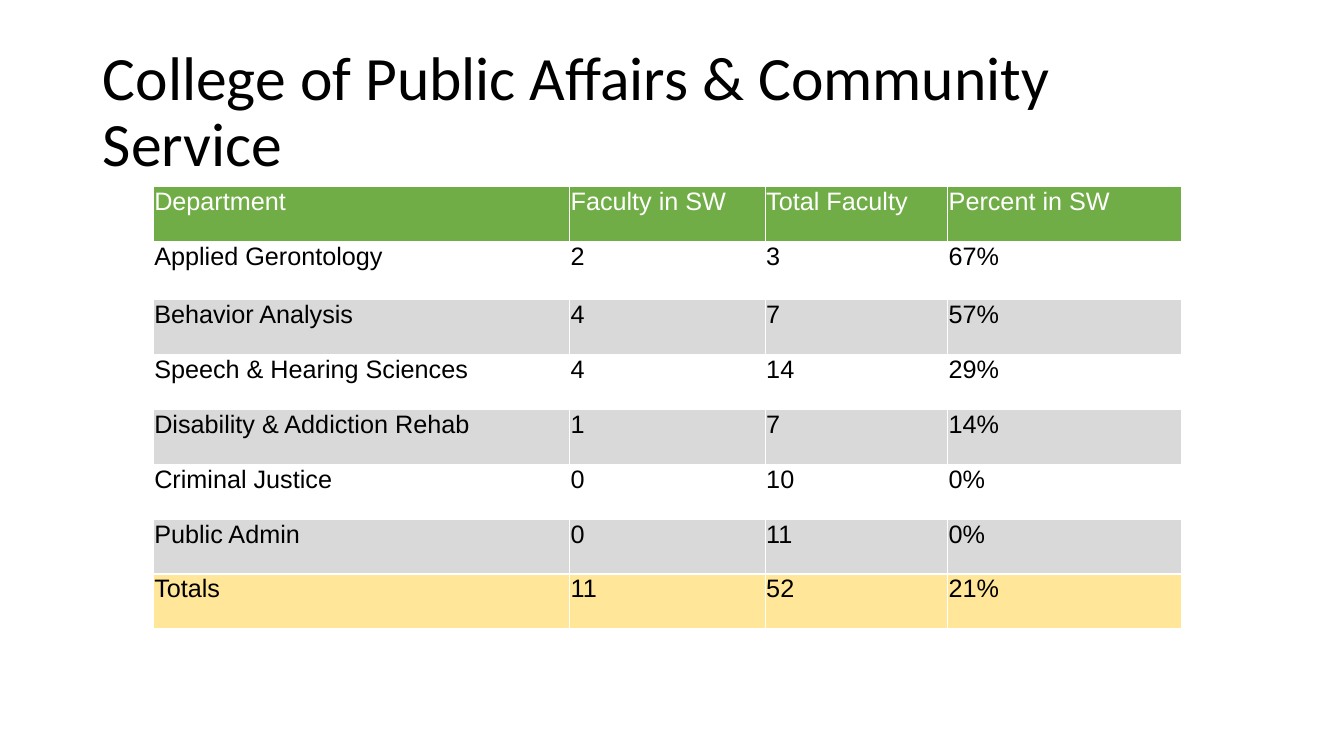
from lxml.etree import SubElement
from pptx import Presentation
from pptx.dml.color import RGBColor
from pptx.enum.text import MSO_ANCHOR, MSO_AUTO_SIZE, PP_ALIGN
from pptx.oxml.ns import qn
from pptx.util import Inches, Pt

BLACK = RGBColor(0x00, 0x00, 0x00)
WHITE = RGBColor(0xFF, 0xFF, 0xFF)
GREEN = RGBColor(0x70, 0xAD, 0x47)
GRAY = RGBColor(0xD9, 0xD9, 0xD9)
YELLOW = RGBColor(0xFF, 0xE6, 0x99)

TITLE = "College of Public Affairs & Community Service"
TITLE_BOX = (0.92, 0.4, 11.5, 1.45)
TABLE_BOX = (1.52, 1.85, 10.2, 4.39)
COLUMN_WEIGHTS = (4.13, 1.94, 1.81, 2.32)
FIRST_DEPARTMENT_HEIGHT = 0.58
FACULTY_ROWS = (
    ("Department", "Faculty in SW", "Total Faculty", "Percent in SW"),
    ("Applied Gerontology", "2", "3", "67%"),
    ("Behavior Analysis", "4", "7", "57%"),
    ("Speech & Hearing Sciences", "4", "14", "29%"),
    ("Disability & Addiction Rehab", "1", "7", "14%"),
    ("Criminal Justice", "0", "10", "0%"),
    ("Public Admin", "0", "11", "0%"),
    ("Totals", "11", "52", "21%"),
)


def format_font(paragraph, name, size, color):
    paragraph.font.name = name
    paragraph.font.size = Pt(size)
    paragraph.font.color.rgb = color


def place_title(slide, box):
    title = slide.shapes.title
    title.left, title.top, title.width, title.height = map(Inches, box)
    frame = title.text_frame
    frame.text = TITLE
    frame.word_wrap = True
    frame.auto_size = MSO_AUTO_SIZE.NONE
    frame.vertical_anchor = MSO_ANCHOR.MIDDLE
    paragraph = frame.paragraphs[0]
    paragraph.alignment = PP_ALIGN.LEFT
    paragraph.line_spacing = 0.9
    format_font(paragraph, "Calibri", 44, BLACK)


def row_fill(index):
    if index == 0:
        return GREEN
    if index == len(FACULTY_ROWS) - 1:
        return YELLOW
    return GRAY if index % 2 == 0 else None


def add_borders(cell):
    properties = cell._tc.get_or_add_tcPr()
    for side in ("a:lnL", "a:lnR", "a:lnT", "a:lnB"):
        line = SubElement(properties, qn(side), w=str(Pt(1)))
        fill = SubElement(line, qn("a:solidFill"))
        SubElement(fill, qn("a:srgbClr"), val=str(WHITE))


def format_cell(cell, text, fill, font_color):
    cell.text = text
    cell.margin_left = cell.margin_right = cell.margin_top = Inches(0.01)
    cell.margin_bottom = 0
    cell.vertical_anchor = MSO_ANCHOR.TOP
    format_font(cell.text_frame.paragraphs[0], "Arial", 18, font_color)
    add_borders(cell)
    if fill is None:
        cell.fill.background()
    else:
        cell.fill.solid()
        cell.fill.fore_color.rgb = fill


def place_faculty_table(slide, box):
    width, height = box[2:]
    row_count, column_count = len(FACULTY_ROWS), len(COLUMN_WEIGHTS)
    table = slide.shapes.add_table(row_count, column_count, *map(Inches, box)).table
    table.first_row = table.horz_banding = False
    for column, weight in zip(table.columns, COLUMN_WEIGHTS):
        column.width = Inches(width * weight / sum(COLUMN_WEIGHTS))
    for row in table.rows:
        row.height = Inches((height - FIRST_DEPARTMENT_HEIGHT) / (row_count - 1))
    table.rows[1].height = Inches(FIRST_DEPARTMENT_HEIGHT)
    for row_index, values in enumerate(FACULTY_ROWS):
        font_color = WHITE if row_index == 0 else BLACK
        for column_index, text in enumerate(values):
            cell = table.cell(row_index, column_index)
            format_cell(cell, text, row_fill(row_index), font_color)


def main():
    presentation = Presentation()
    presentation.slide_width = Inches(13.33)
    presentation.slide_height = Inches(7.5)
    slide = presentation.slides.add_slide(presentation.slide_layouts[5])
    place_title(slide, TITLE_BOX)
    place_faculty_table(slide, TABLE_BOX)
    presentation.save("out.pptx")


if __name__ == "__main__":
    main()
